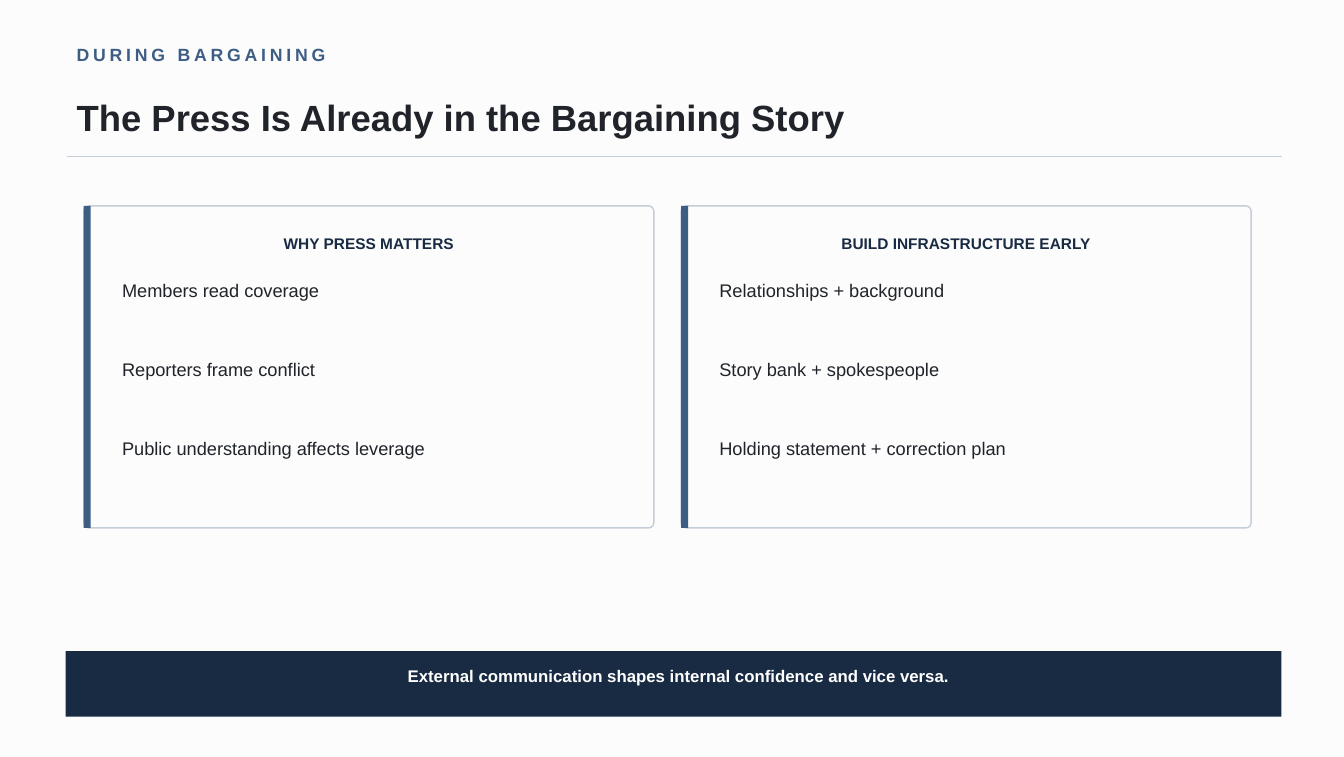
from dataclasses import dataclass

from lxml.etree import SubElement
from pptx import Presentation
from pptx.dml.color import RGBColor
from pptx.enum.shapes import MSO_CONNECTOR, MSO_SHAPE
from pptx.enum.text import PP_ALIGN
from pptx.oxml.ns import qn
from pptx.shapes.autoshape import Shape
from pptx.slide import Slide
from pptx.util import Inches, Pt

PAPER = RGBColor(0xFB, 0xFC, 0xFB)
INK = RGBColor(0x20, 0x24, 0x2A)
NAVY = RGBColor(0x19, 0x2A, 0x43)
BLUE = RGBColor(0x3E, 0x5D, 0x85)
RULE = RGBColor(0xC5, 0xCD, 0xD6)
WHITE = RGBColor(0xFF, 0xFF, 0xFF)

CARD_TOP, CARD_WIDTH, CARD_HEIGHT = 2.04, 5.65, 3.19
CARD_LEFT, CARD_STEP = 0.83, 5.92
POINT_TOP, POINT_STEP = 2.77, 0.78


@dataclass
class Card:
    title: str
    points: list[str]


CARDS = [
    Card("WHY PRESS MATTERS",
         ["Members read coverage",
          "Reporters frame conflict",
          "Public understanding affects leverage"]),
    Card("BUILD INFRASTRUCTURE EARLY",
         ["Relationships + background",
          "Story bank + spokespeople",
          "Holding statement + correction plan"]),
]


def add_text(slide: Slide, text: str, left: float, top: float, width: float,
             height: float, *, size: float, color: RGBColor = INK,
             bold: bool = False, align: PP_ALIGN = PP_ALIGN.LEFT,
             leading: float | None = None, tracking: float = 0) -> None:
    """Place one line of text; tracking is letter spacing in points."""
    box = slide.shapes.add_textbox(
        Inches(left), Inches(top), Inches(width), Inches(height))
    frame = box.text_frame
    frame.word_wrap = True
    frame.margin_left = frame.margin_right = 0
    frame.margin_top = frame.margin_bottom = 0
    para = frame.paragraphs[0]
    para.alignment = align
    para.line_spacing = leading
    run = para.add_run()
    run.text = text
    font = run.font
    font.name, font.size, font.bold = "Arial", Pt(size), bold
    font.color.rgb = color
    if tracking:
        run._r.get_or_add_rPr().set("spc", str(round(tracking * 100)))


def add_block(slide: Slide, kind: MSO_SHAPE, left: float, top: float,
              width: float, height: float, fill: RGBColor,
              line: RGBColor | None = None) -> Shape:
    block = slide.shapes.add_shape(
        kind, Inches(left), Inches(top), Inches(width), Inches(height))
    block.shadow.inherit = False
    block.fill.solid()
    block.fill.fore_color.rgb = fill
    if line is None:
        block.line.fill.background()
    else:
        block.line.color.rgb = line
        block.line.width = Pt(1)
    return block


def add_rule(slide: Slide, left: float, right: float, top: float) -> None:
    rule = slide.shapes.add_connector(
        MSO_CONNECTOR.STRAIGHT,
        Inches(left), Inches(top), Inches(right), Inches(top))
    rule.line.color.rgb = RULE
    rule.line.width = Pt(1.2)
    SubElement(rule._element.spPr, qn("a:effectLst"))


def add_card(slide: Slide, card: Card, left: float) -> None:
    panel = add_block(slide, MSO_SHAPE.ROUNDED_RECTANGLE, left, CARD_TOP,
                      CARD_WIDTH, CARD_HEIGHT, PAPER, RULE)
    panel.adjustments[0] = 0.016
    add_block(slide, MSO_SHAPE.RECTANGLE, left, CARD_TOP,
              0.07, CARD_HEIGHT, BLUE)
    add_text(slide, card.title, left + 0.35, 2.32, 4.95, 0.22,
             size=11, color=NAVY, bold=True, align=PP_ALIGN.CENTER)
    for row, point in enumerate(card.points):
        add_text(slide, point, left + 0.38, POINT_TOP + row * POINT_STEP,
                 4.9, 0.32, size=13)


def main() -> None:
    deck = Presentation()
    deck.slide_width, deck.slide_height = Inches(13.32), Inches(7.5)
    slide = deck.slides.add_slide(deck.slide_layouts[6])
    slide.background.fill.solid()
    slide.background.fill.fore_color.rgb = PAPER

    add_text(slide, "DURING BARGAINING", 0.76, 0.46, 8.2, 0.2, size=12.6,
             color=BLUE, bold=True, leading=0.9, tracking=2.7)
    add_text(slide, "The Press Is Already in the Bargaining Story",
             0.76, 0.94, 12, 0.55, size=26, bold=True)
    add_rule(slide, 0.66, 12.71, 1.55)

    for col, card in enumerate(CARDS):
        add_card(slide, card, CARD_LEFT + col * CARD_STEP)

    add_block(slide, MSO_SHAPE.RECTANGLE, 0.65, 6.45, 12.05, 0.65, NAVY)
    add_text(slide,
             "External communication shapes internal confidence and vice versa.",
             4.04, 6.6, 8.66, 0.34, size=12, color=WHITE, bold=True)
    deck.save("out.pptx")


if __name__ == "__main__":
    main()
